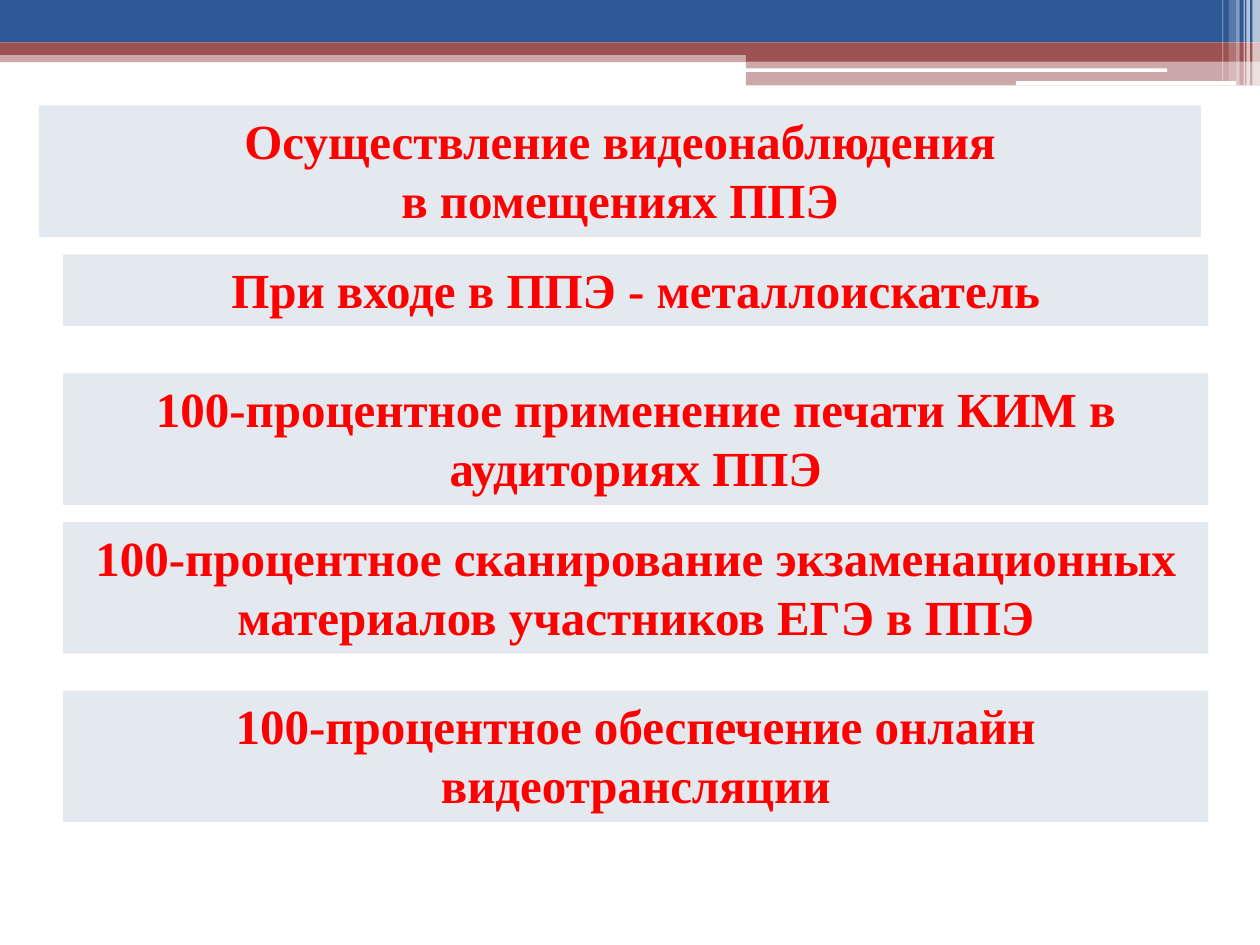
from lxml.etree import SubElement
from pptx import Presentation
from pptx.dml.color import RGBColor
from pptx.enum.shapes import MSO_SHAPE
from pptx.enum.text import MSO_ANCHOR, MSO_AUTO_SIZE, PP_ALIGN
from pptx.oxml.ns import qn
from pptx.util import Pt

COLOURS = {"blue": "2E5796", "brick": "9C5252", "white": "FFFFFF",
           "panel": "E3E9EE", "red": "FF0000"}

BANDS = [
    (0, 31.4, 426.2, 4.1, "brick", 50),
    (0, 0, 720, 24.3, "blue", 100),
    (426.2, 34.9, 293.8, 13.9, "brick", 50),
]
BARS = [(425.9, 39.1, 241, 2, "white", 100), (580.6, 46.4, 125.8, 2.4, "white", 100)]
STRIPES = [
    (712.2, 0, 2, 48.8, "white", 65),
    (715.7, 0, 4.3, 48.8, "white", 65),
    (710.7, 0, 0.7, 48.8, "white", 60),
    (706.4, 0, 2, 48.8, "white", 40),
    (702, 0, 4.4, 46.4, "white", 20),
    (698.4, 0, 0.8, 46.4, "white", 30),
]
MEASURES = [
    (22.3, 60.2, 664, 75.2, "Осуществление видеонаблюдения\vв помещениях ППЭ"),
    (36, 145.4, 654.5, 41, "При входе в ППЭ - металлоискатель"),
    (36, 213.4, 654.5, 75.2, "100-процентное применение печати КИМ в аудиториях ППЭ"),
    (36, 298.3, 654.5, 75.2,
     "100-процентное сканирование экзаменационных материалов участников ЕГЭ в ППЭ"),
    (36, 394.6, 654.5, 75.3, "100-процентное обеспечение онлайн видеотрансляции"),
]


def paint(shape, colour, opacity=100):
    """Give a shape a flat fill with no outline or shadow."""
    shape.shadow.inherit = False
    shape.line.fill.background()
    shape.fill.solid()
    shape.fill.fore_color.rgb = RGBColor.from_string(COLOURS[colour])
    if opacity < 100:
        tint = shape.fill._xPr.find(".//" + qn("a:srgbClr"))
        SubElement(tint, qn("a:alpha"), val=str(opacity * 1000))


def add_block(slide, left, top, width, height, colour, opacity=100,
              preset=MSO_SHAPE.RECTANGLE):
    """Add one painted block."""
    block = slide.shapes.add_shape(preset, Pt(left), Pt(top), Pt(width), Pt(height))
    paint(block, colour, opacity)
    return block


def add_stepped_band(slide, left, top, width):
    """Draw the brick band, which is deeper from its step to its right end."""
    step, shallow, deep = left + 426.2, top + 7.1, top + 11
    right = left + width
    outline = slide.shapes.build_freeform(Pt(left), Pt(top), scale=1.0)
    corners = [(right, top), (right, deep), (step, deep), (step, shallow), (left, shallow)]
    outline.add_line_segments([(Pt(x), Pt(y)) for x, y in corners], close=True)
    paint(outline.convert_to_shape(), "brick")


def add_header(slide, left, top, width):
    """Draw the header bands, white bars and edge stripes."""
    def place(parts, preset=MSO_SHAPE.RECTANGLE):
        """Place parts relative to the header's corner."""
        for x, y, part_width, height, colour, opacity in parts:
            add_block(slide, left + x, top + y, part_width, height, colour, opacity, preset)

    place(BANDS[:2])
    add_stepped_band(slide, left, top + 24.3, width)
    place(BANDS[2:])
    place(BARS, MSO_SHAPE.ROUNDED_RECTANGLE)
    place(STRIPES)


def add_measure(slide, left, top, width, height, wording):
    """Add one panel with a centred measure."""
    panel = add_block(slide, left, top, width, height, "panel")
    frame = panel.text_frame
    frame.word_wrap = True
    frame.auto_size = MSO_AUTO_SIZE.SHAPE_TO_FIT_TEXT
    frame.vertical_anchor = MSO_ANCHOR.TOP
    frame.margin_left = frame.margin_right = frame.margin_bottom = 0
    frame.margin_top = Pt(3)
    frame.text = wording
    paragraph = frame.paragraphs[0]
    paragraph.alignment = PP_ALIGN.CENTER
    paragraph.space_before = Pt(3)
    paragraph.font.name = "Times New Roman"
    paragraph.font.size = Pt(28)
    paragraph.font.bold = True
    paragraph.font.color.rgb = RGBColor.from_string(COLOURS["red"])


def main():
    """Build and save the slide."""
    deck = Presentation()
    deck.slide_width, deck.slide_height = Pt(720), Pt(540)
    slide = deck.slides.add_slide(deck.slide_layouts[6])
    add_header(slide, 0, 0, 720)
    for measure in MEASURES:
        add_measure(slide, *measure)
    deck.save("out.pptx")


if __name__ == "__main__":
    main()
